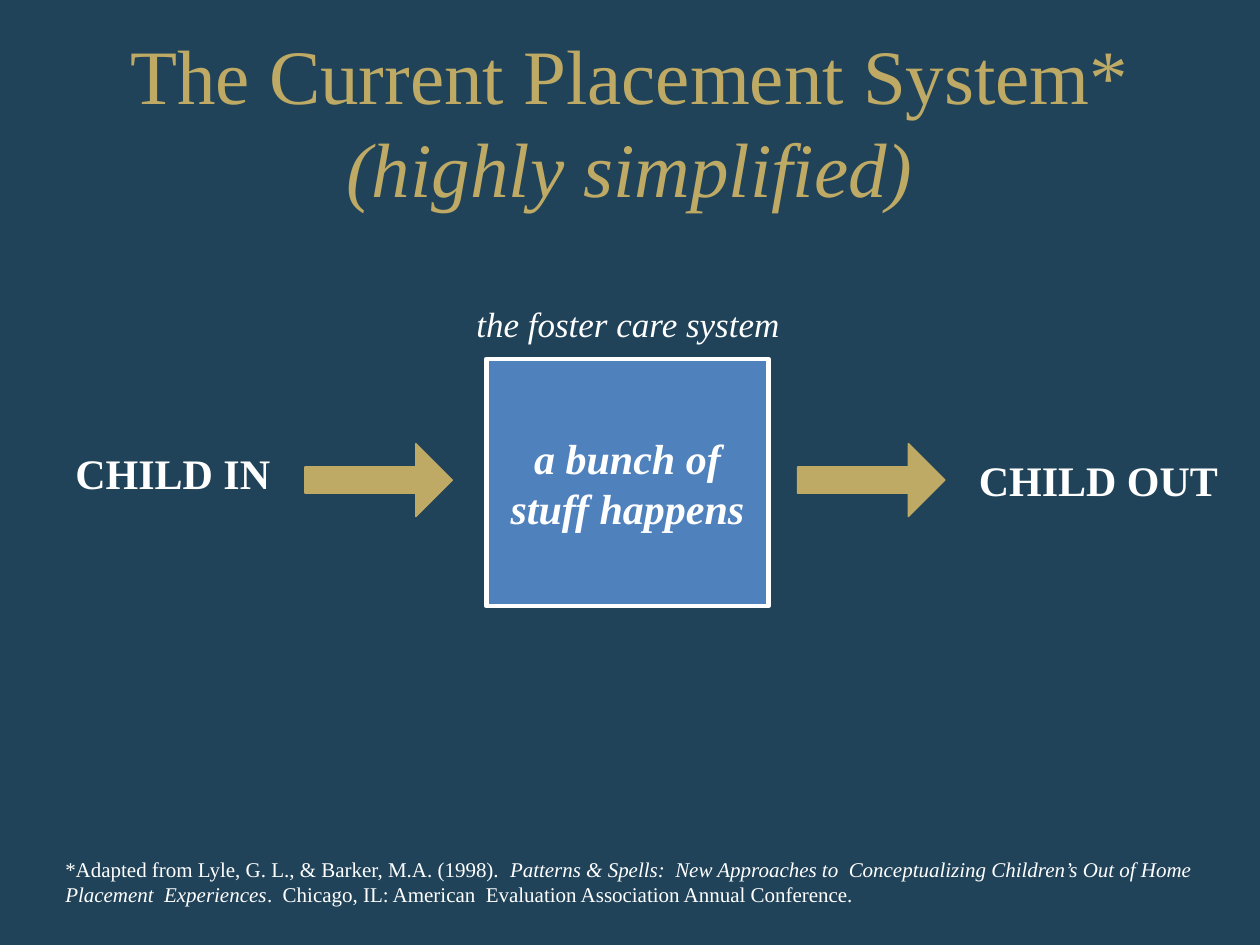
import pptx
import pptx.dml.color
import pptx.enum.shapes
import pptx.enum.text
import pptx.util
from dataclasses import dataclass

Inches = pptx.util.Inches
Shapes = pptx.enum.shapes.MSO_SHAPE
Align = pptx.enum.text.PP_ALIGN
AutoSize = pptx.enum.text.MSO_AUTO_SIZE


@dataclass(frozen=True)
class Theme:
    font: str = "Times New Roman"
    background: str = "204359"
    gold: str = "BEAA64"
    blue: str = "4F81BD"
    white: str = "FFFFFF"
    title_size: int = 44
    label_size: int = 24
    caption_size: int = 20
    note_size: int = 12


def color(value):
    return pptx.dml.color.RGBColor.from_string(value)


class SlideBuilder:
    def __init__(self, slide, theme):
        self.slide = slide
        self.theme = theme
        fill = slide.background.fill
        fill.solid()
        fill.fore_color.rgb = color(theme.background)

    def format_run(self, run, size, tint, bold=False, italic=False):
        run.font.name = self.theme.font
        run.font.size = pptx.util.Pt(size)
        run.font.color.rgb = color(tint)
        run.font.bold = bold
        run.font.italic = italic

    def title(self, heading, subheading, left, top, width, height):
        title = self.slide.shapes.title
        title.left, title.top = Inches(left), Inches(top)
        title.width, title.height = Inches(width), Inches(height)
        frame = title.text_frame
        frame.auto_size = AutoSize.NONE
        frame.vertical_anchor = pptx.enum.text.MSO_ANCHOR.MIDDLE
        paragraph = frame.paragraphs[0]
        paragraph.text = f"{heading}\v{subheading}"
        paragraph.alignment = Align.CENTER
        for run, italic in zip(paragraph.runs, (False, True)):
            self.format_run(run, self.theme.title_size, self.theme.gold, italic=italic)

    def text(self, fragments, left, top, width, height, size,
             bold=False, align=Align.LEFT, wrap=True):
        box = self.slide.shapes.add_textbox(
            Inches(left), Inches(top), Inches(width), Inches(height))
        frame = box.text_frame
        frame.word_wrap = wrap
        frame.auto_size = AutoSize.SHAPE_TO_FIT_TEXT
        paragraph = frame.paragraphs[0]
        paragraph.alignment = align
        for words, italic in fragments:
            run = paragraph.add_run()
            run.text = words
            self.format_run(run, size, self.theme.white, bold, italic)

    def shape(self, preset, left, top, width, height, fill, line, line_width):
        shape = self.slide.shapes.add_shape(
            preset, Inches(left), Inches(top), Inches(width), Inches(height))
        shape.shadow.inherit = False
        shape.fill.solid()
        shape.fill.fore_color.rgb = color(fill)
        shape.line.color.rgb = color(line)
        shape.line.width = pptx.util.Pt(line_width)
        return shape

    def flow_arrow(self, left, top):
        arrow = self.shape(Shapes.RIGHT_ARROW, left, top, 1.17, 0.58,
                           self.theme.gold, self.theme.gold, 0.75)
        arrow.adjustments[0] = 0.36
        arrow.adjustments[1] = 0.5


def main():
    theme = Theme()
    deck = pptx.Presentation()
    deck.slide_width, deck.slide_height = Inches(10), Inches(7.5)
    builder = SlideBuilder(deck.slides.add_slide(deck.slide_layouts[5]), theme)

    builder.title("The Current Placement System*", "(highly simplified)",
                  0.25, 0.33, 9.5, 1.25)

    citation = [
        ("*Adapted from Lyle, G. L., & Barker, M.A. (1998).  ", False),
        ("Patterns & Spells:  New Approaches to  Conceptualizing Children’s "
         "Out of Home Placement  Experiences", True),
        (".  Chicago, IL: American  Evaluation Association Annual Conference.", False),
    ]
    builder.text(citation, 0.42, 6.75, 9.17, 0.51, theme.note_size)

    builder.shape(Shapes.RECTANGLE, 3.86, 2.85, 2.24, 1.96,
                  theme.blue, theme.white, 2.75)
    builder.text([("a bunch of stuff happens", True)], 3.86, 3.38, 2.24, 0.91,
                 theme.label_size, bold=True, align=Align.CENTER)
    builder.text([("the foster care system", True)], 3.15, 2.35, 3.67, 0.44,
                 theme.caption_size, align=Align.CENTER)

    for words, left, top, width in (("CHILD IN", 0.5, 3.5, 1.76),
                                    ("CHILD OUT", 7.67, 3.56, 2.11)):
        builder.text([(words, False)], left, top, width, 0.5,
                     theme.label_size, bold=True, wrap=False)

    for left in (2.42, 6.33):
        builder.flow_arrow(left, 3.52)

    deck.save("out.pptx")


if __name__ == "__main__":
    main()
